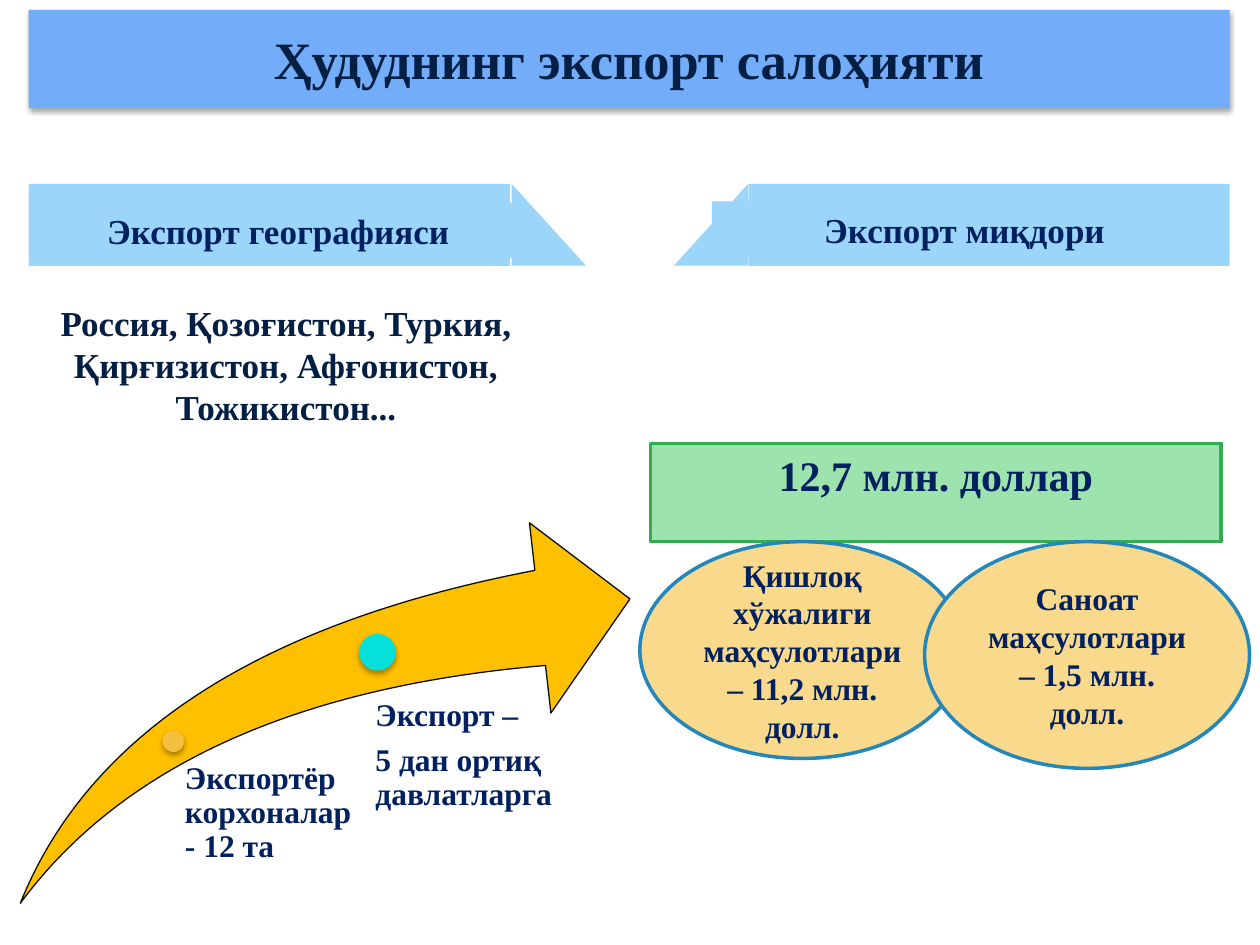
import pptx
import pptx.util
import pptx.dml.color
import pptx.enum.shapes
import pptx.enum.text
import pptx.oxml
import pptx.oxml.ns
from dataclasses import dataclass

Cm, Pt = pptx.util.Cm, pptx.util.Pt
KIND = pptx.enum.shapes.MSO_SHAPE
ALIGN = pptx.enum.text.PP_ALIGN
ANCHOR = pptx.enum.text.MSO_ANCHOR


@dataclass(frozen=True)
class Theme:
    font: str = "Times New Roman"
    ink: str = "041F44"
    navy: str = "002060"
    title: str = "73ACF8"
    sky: str = "9BD5FA"
    arrow: str = "FFC000"
    edge: str = "0D0D0D"
    amber: str = "F5C040"
    aqua: str = "05E0DB"
    mint: str = "9DE3AE"
    green: str = "32AE51"
    sand: str = "F9D98C"
    blue: str = "2487BB"
    huge: float = 30
    big: float = 24
    mid: float = 20
    small: float = 18


T = Theme()


def rgb(code):
    return pptx.dml.color.RGBColor.from_string(code)


def cast(shape):
    """Give a shape a soft shadow that falls straight down."""
    shape._element.spPr.append(pptx.oxml.parse_xml(
        f'<a:effectLst {pptx.oxml.ns.nsdecls("a")}>'
        '<a:outerShdw blurRad="39370" dist="22860" dir="5400000" rotWithShape="0">'
        '<a:srgbClr val="000000"><a:alpha val="35000"/></a:srgbClr>'
        '</a:outerShdw></a:effectLst>'))


def draw(slide, kind, box, fill, line=None, width=2, shade=False):
    shape = slide.shapes.add_shape(kind, *map(Cm, box))
    shape.fill.solid()
    shape.fill.fore_color.rgb = rgb(fill)
    if line:
        shape.line.color.rgb = rgb(line)
        shape.line.width = Pt(width)
    else:
        shape.line.fill.background()
    if shade:
        cast(shape)
    else:
        shape.shadow.inherit = False
    return shape


def write(shape, lines, size, color=T.navy, align=ALIGN.CENTER, anchor=ANCHOR.MIDDLE):
    frame = shape.text_frame
    frame.word_wrap = True
    frame.vertical_anchor = anchor
    for i, line in enumerate(lines):
        para = frame.paragraphs[0] if i == 0 else frame.add_paragraph()
        para.alignment = align
        run = para.add_run()
        run.text = line
        run.font.name = T.font
        run.font.size = Pt(size)
        run.font.bold = True
        run.font.color.rgb = rgb(color)
    return frame


def head(slide, box):
    bar = draw(slide, KIND.RECTANGLE, box, T.title, shade=True)
    write(bar, ["Ҳудуднинг экспорт салоҳияти"], T.huge, T.ink)


def banner(slide, box, text, tip, label, turn, flip=False):
    """Bar with a slanted end; tip and label are offsets from the bar."""
    x, y, w, h = box
    draw(slide, KIND.RECTANGLE, box, T.sky)
    end = draw(slide, KIND.RIGHT_TRIANGLE, (x + tip, y + 0.07, h, 1.5), T.sky)
    end.rotation = turn
    if flip:
        end._element.spPr.xfrm.set("flipH", "1")
    dx, dy, wide = label
    tab = draw(slide, KIND.RECTANGLE, (x + dx, y + dy, wide, 1.12), T.sky)
    write(tab, [text], T.mid)


def lands(slide, box):
    area = slide.shapes.add_textbox(*map(Cm, box))
    write(area, ["Россия, Қозоғистон, Туркия,",
                 "Қирғизистон, Афғонистон, Тожикистон..."], T.mid, T.ink)


def growth(slide, box):
    """Rising arrow with two marked steps."""
    x, y, w, h = box
    sweep = draw(slide, KIND.SWOOSH_ARROW, box, T.arrow, T.edge, 0.75)
    sweep.adjustments[0] = sweep.adjustments[1] = 0.25
    # Each step: dot place, size and fill; note place, height, inset and lines
    steps = [
        (2.87, 4.19, 0.43, T.amber, 2.94, 4.83, 5.08, 0.38,
         ["Экспортёр корхоналар - 12 та"]),
        (6.83, 2.24, 0.74, T.aqua, 6.93, 3.56, 3.28, 0.23,
         ["Экспорт –", "5 дан ортиқ давлатларга"]),
    ]
    for dx, dy, size, fill, nx, ny, tall, inset, lines in steps:
        draw(slide, KIND.OVAL, (x + dx, y + dy, size, size), fill, shade=True)
        note = slide.shapes.add_textbox(Cm(x + nx), Cm(y + ny), Cm(3.99), Cm(tall))
        frame = write(note, lines, T.small, align=ALIGN.LEFT, anchor=ANCHOR.TOP)
        frame.margin_left = Cm(inset)
        frame.margin_top = frame.margin_right = frame.margin_bottom = 0
        for para in frame.paragraphs:
            para.line_spacing = 0.9
            para.space_after = Pt(6.3)


def volume(slide, box):
    """Total with its two parts below."""
    x, y, w, h = box
    total = draw(slide, KIND.RECTANGLE, box, T.mint, T.green)
    write(total, ["12,7 млн. доллар"], T.big, anchor=ANCHOR.TOP)
    parts = [(-0.21, 4.37, "Қишлоқ хўжалиги маҳсулотлари – 11,2 млн. долл."),
             (5.53, 4.57, "Саноат маҳсулотлари – 1,5 млн. долл.")]
    for dx, tall, text in parts:
        part = draw(slide, KIND.OVAL, (x + dx, y + h, 6.55, tall), T.sand, T.blue)
        write(part, [text], T.small)


def main():
    deck = pptx.Presentation()
    deck.slide_width, deck.slide_height = Cm(25.4), Cm(19.05)
    slide = deck.slides.add_slide(deck.slide_layouts[6])
    head(slide, (0.58, 0.2, 24.21, 1.98))
    growth(slide, (0.41, 10.54, 12.29, 7.67))
    banner(slide, (0.58, 3.71, 9.7, 1.65), "Экспорт географияси",
           9.66, (0.18, 0.38, 9.7), 90, flip=True)
    banner(slide, (15.09, 3.71, 9.7, 1.65), "Экспорт миқдори",
           -1.58, (-0.74, 0.35, 10.19), 270)
    lands(slide, (-0.79, 6.35, 13.11, 1.98))
    volume(slide, (13.11, 8.94, 11.51, 1.98))
    deck.save("out.pptx")


if __name__ == "__main__":
    main()
